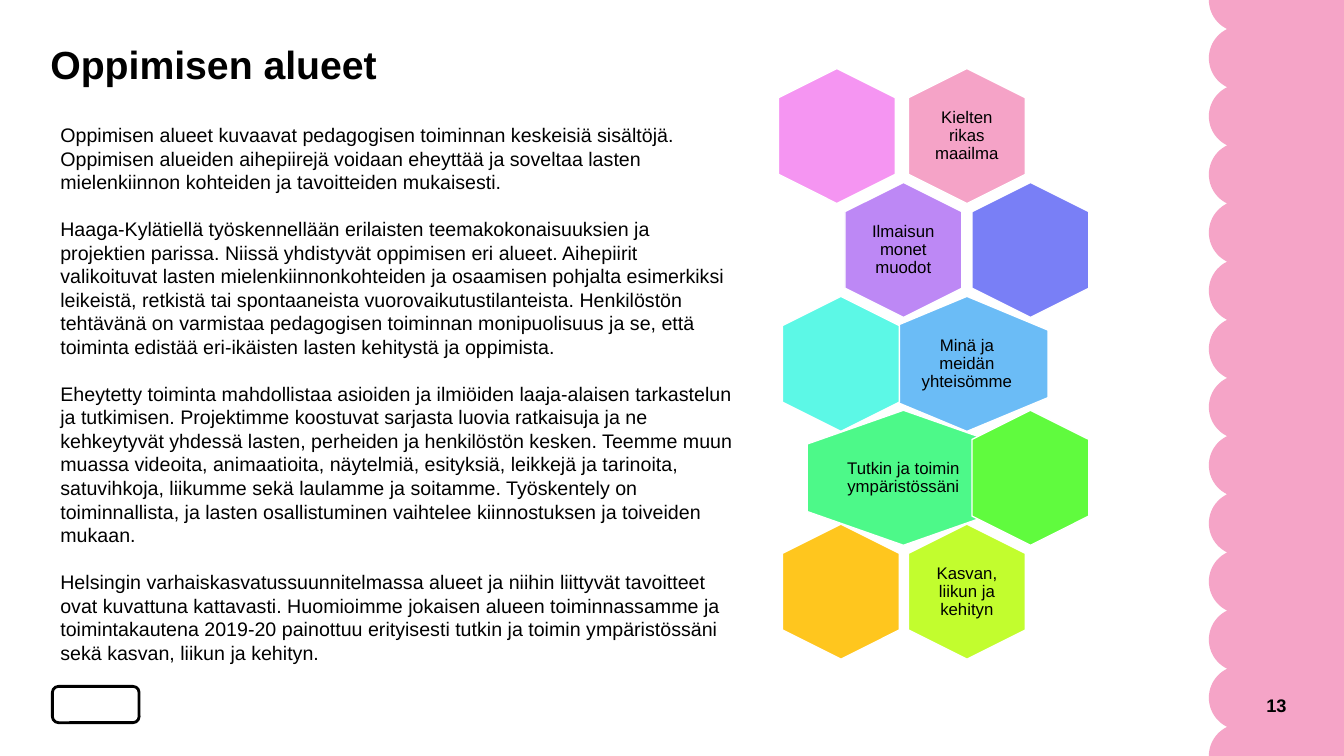
from math import asin, cos, sin

from pptx import Presentation
from pptx.dml.color import RGBColor
from pptx.enum.shapes import MSO_SHAPE as Shape
from pptx.enum.text import MSO_ANCHOR as Anchor, PP_ALIGN as Align
from pptx.util import Inches, Pt

BLACK = RGBColor(0x00, 0x00, 0x00)
WHITE = RGBColor(0xFF, 0xFF, 0xFF)
PINK = RGBColor(0xF5, 0xA4, 0xC7)
ROSE = RGBColor(0xF5, 0xA3, 0xC7)
ORCHID = RGBColor(0xF5, 0x95, 0xF2)
PURPLE = RGBColor(0xBD, 0x88, 0xF5)
INDIGO = RGBColor(0x79, 0x7F, 0xF6)
SKY = RGBColor(0x6B, 0xBC, 0xF6)
AQUA = RGBColor(0x5C, 0xF8, 0xE6)
MINT = RGBColor(0x4D, 0xF9, 0x89)
GREEN = RGBColor(0x60, 0xFB, 0x3E)
LIME = RGBColor(0xC2, 0xFD, 0x2E)
AMBER = RGBColor(0xFF, 0xC6, 0x1E)

WIDE, HIGH = 13.33, 7.5

BODY = [
    "Oppimisen alueet kuvaavat pedagogisen toiminnan keskeisiä sisältöjä. "
    "Oppimisen alueiden aihepiirejä voidaan eheyttää ja soveltaa lasten "
    "mielenkiinnon kohteiden ja tavoitteiden mukaisesti.",
    "Haaga-Kylätiellä työskennellään erilaisten teemakokonaisuuksien ja "
    "projektien parissa. Niissä yhdistyvät oppimisen eri alueet. Aihepiirit "
    "valikoituvat lasten mielenkiinnonkohteiden ja osaamisen pohjalta esimerkiksi "
    "leikeistä, retkistä tai spontaaneista vuorovaikutustilanteista. Henkilöstön "
    "tehtävänä on varmistaa pedagogisen toiminnan monipuolisuus ja se, että "
    "toiminta edistää eri-ikäisten lasten kehitystä ja oppimista.",
    "Eheytetty toiminta mahdollistaa asioiden ja ilmiöiden laaja-alaisen "
    "tarkastelun ja tutkimisen. Projektimme koostuvat sarjasta luovia ratkaisuja "
    "ja ne kehkeytyvät yhdessä lasten, perheiden ja henkilöstön kesken. Teemme "
    "muun muassa videoita, animaatioita, näytelmiä, esityksiä, leikkejä ja "
    "tarinoita, satuvihkoja, liikumme sekä laulamme ja soitamme. Työskentely on "
    "toiminnallista, ja lasten osallistuminen vaihtelee kiinnostuksen ja "
    "toiveiden mukaan.",
    "Helsingin varhaiskasvatussuunnitelmassa alueet ja niihin liittyvät tavoitteet "
    "ovat kuvattuna kattavasti. Huomioimme jokaisen alueen toiminnassamme ja "
    "toimintakautena 2019-20 painottuu erityisesti tutkin ja toimin "
    "ympäristössäni sekä kasvan, liikun ja kehityn.",
]

# Row, centre x, width, fill, label, label width
CELLS = [
    (0, 9.59, 1.16, ROSE, "Kielten rikas maailma", 0.8),
    (0, 8.3, 1.16, ORCHID, None, 0),
    (1, 8.96, 1.16, PURPLE, "Ilmaisun monet muodot", 0.8),
    (1, 10.22, 1.16, INDIGO, None, 0),
    (2, 9.59, 1.61, SKY, "Minä ja meidän yhteisömme", 1.08),
    (2, 8.34, 1.16, AQUA, None, 0),
    (3, 8.96, 1.91, MINT, "Tutkin ja toimin ympäristössäni", 1.28),
    (3, 10.22, 1.16, GREEN, None, 0),
    (4, 9.59, 1.16, LIME, "Kasvan, liikun ja kehityn", 0.8),
    (4, 8.34, 1.16, AMBER, None, 0),
]


class Page:
    font = "Arial"

    def __init__(self, deck):
        self.slide = deck.slides.add_slide(deck.slide_layouts[6])
        self.shapes = self.slide.shapes

    def text(self, x, y, w, h, lines, size, bold=False, align=Align.LEFT,
             anchor=Anchor.TOP, inset=0, top=None, space=1.0, after=0):
        box = self.shapes.add_textbox(Inches(x), Inches(y), Inches(w), Inches(h))
        frame = box.text_frame
        frame.word_wrap = True
        frame.vertical_anchor = anchor
        frame.margin_left = frame.margin_right = Inches(inset)
        frame.margin_bottom = Inches(min(inset, 0.05))
        frame.margin_top = Inches(min(inset, 0.05) if top is None else top)
        for i, line in enumerate(lines):
            para = frame.add_paragraph() if i else frame.paragraphs[0]
            para.alignment = align
            para.line_spacing = space
            para.space_after = Pt(after)
            run = para.add_run()
            run.text = line
            run.font.name = self.font
            run.font.size = Pt(size)
            run.font.bold = bold
            run.font.color.rgb = BLACK

    def paint(self, shape, fill, line=None, width=1):
        shape.shadow.inherit = False
        shape.fill.solid()
        shape.fill.fore_color.rgb = fill
        if line is None:
            shape.line.fill.background()
        else:
            shape.line.color.rgb = line
            shape.line.width = Pt(width)

    def shape(self, kind, x, y, w, h, fill, line=None, width=1, turn=0):
        shape = self.shapes.add_shape(kind, Inches(x), Inches(y), Inches(w), Inches(h))
        shape.rotation = turn
        self.paint(shape, fill, line, width)

    def outline(self, points, fill):
        start, *rest = [(Inches(x), Inches(y)) for x, y in points]
        pen = self.shapes.build_freeform(*start)
        pen.add_line_segments(rest, close=True)
        self.paint(pen.convert_to_shape(), fill)

    def hexagon(self, x, y, wide, fill, label, room):
        tall = 1.34
        # The preset lies on its side, so it is turned upright
        self.shape(Shape.HEXAGON, x - tall / 2, y - wide / 2, tall, wide,
                   fill, WHITE, turn=90)
        if label:
            self.text(x - room / 2, y - 0.45, room, 0.9, [label], 12,
                      align=Align.CENTER, anchor=Anchor.MIDDLE, inset=0.05, space=0.9)


def scallops(left, count, radius, steps=24):
    """Edge of round lobes down the slide, closed along its right side."""
    pitch = HIGH / count
    sweep = asin(pitch / 2 / radius)
    points = [(WIDE, 0)]
    for lobe in range(count + 1):
        for step in range(steps + 1):
            angle = sweep * (2 * step / steps - 1)
            y = lobe * pitch + radius * sin(angle)
            if -0.001 <= y <= HIGH + 0.001:
                points.append((left + radius * (1 - cos(angle)), y))
    return points + [(WIDE, HIGH)]


def main():
    deck = Presentation()
    deck.slide_width, deck.slide_height = Inches(WIDE), Inches(HIGH)
    page = Page(deck)

    # Plain badge and scalloped band
    page.shape(Shape.ROUNDED_RECTANGLE, 0.52, 6.81, 0.86, 0.36, WHITE, BLACK, 2)
    page.outline(scallops(11.99, 13, 0.32), PINK)

    # Title, page number and body
    page.text(0.5, 0.45, 12.29, 0.74, ["Oppimisen alueet"], 28, bold=True, space=0.9)
    page.text(11.41, 6.86, 1.35, 0.28, ["13"], 13, bold=True,
              align=Align.RIGHT, anchor=Anchor.MIDDLE)
    page.text(0.5, 1.01, 6.92, 6.53, BODY, 14, inset=0.1, top=0.21, after=16.8)

    # Honeycomb of learning areas
    for row, x, wide, fill, label, room in CELLS:
        page.hexagon(x, 1.35 + 1.13 * row, wide, fill, label, room)

    deck.save("out.pptx")


if __name__ == "__main__":
    main()
